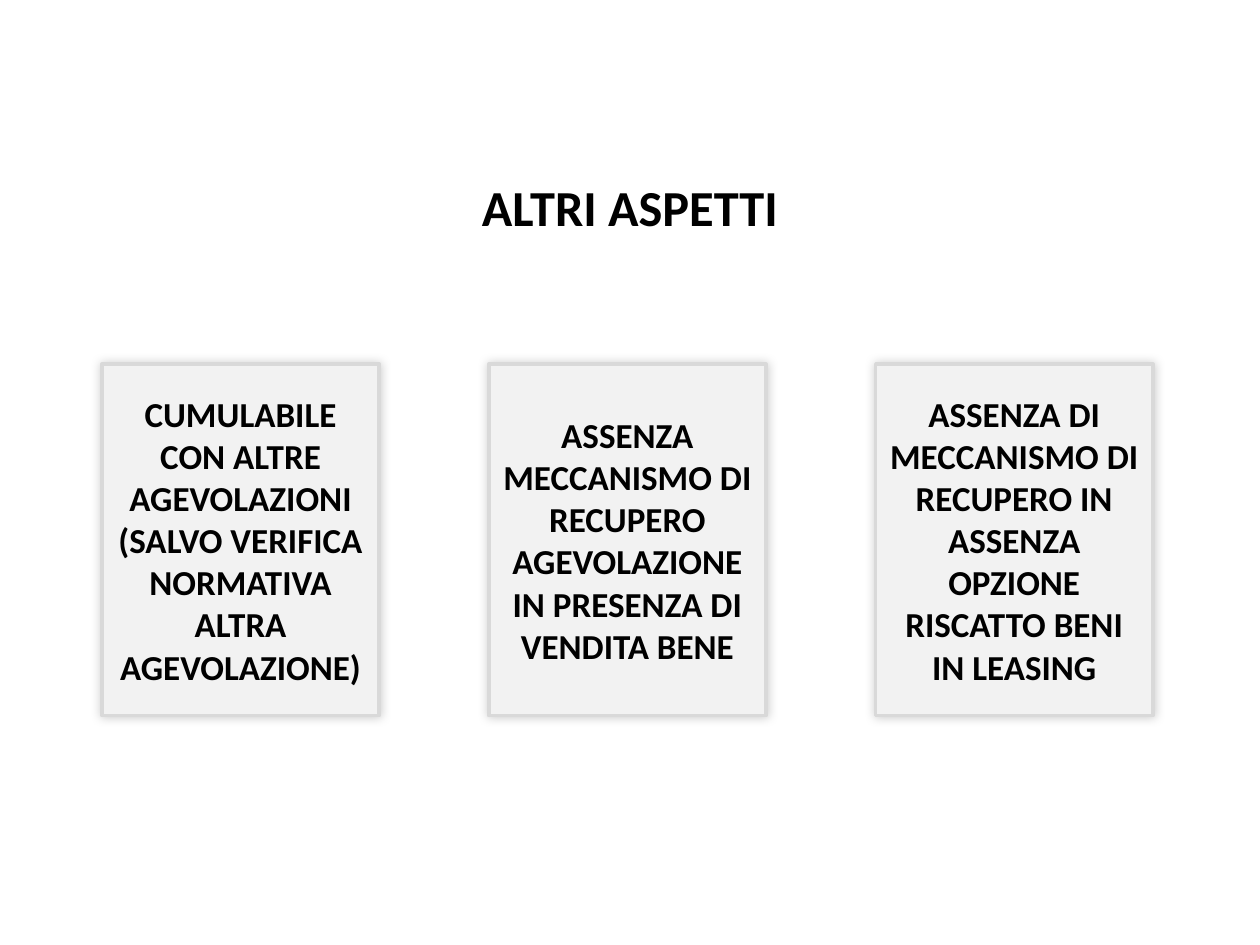
from lxml import etree
from pptx import Presentation
from pptx.dml.color import RGBColor
from pptx.enum.shapes import MSO_SHAPE
from pptx.enum.text import MSO_ANCHOR, MSO_AUTO_SIZE, PP_ALIGN
from pptx.oxml import parse_xml
from pptx.util import Inches, Pt

RECTANGLE = MSO_SHAPE.RECTANGLE
MIDDLE = MSO_ANCHOR.MIDDLE
CENTER = PP_ALIGN.CENTER
NO_AUTOFIT = MSO_AUTO_SIZE.NONE

HEADING = "ALTRI ASPETTI"
ASPECTS = [
    "CUMULABILE CON ALTRE AGEVOLAZIONI (SALVO VERIFICA NORMATIVA ALTRA AGEVOLAZIONE)",
    "ASSENZA MECCANISMO DI RECUPERO AGEVOLAZIONE IN PRESENZA DI VENDITA BENE",
    "ASSENZA DI MECCANISMO DI RECUPERO IN ASSENZA OPZIONE RISCATTO BENI IN LEASING",
]

CARD_LEFT, CARD_TOP = 0.81, 2.89
CARD_WIDTH, CARD_HEIGHT = 2.2, 2.79
CARD_STEP = 3.07

DRAWING_NS = "http://schemas.openxmlformats.org/drawingml/2006/main"
SOFT_SHADOW = f"""
<a:effectLst xmlns:a="{DRAWING_NS}">
  <a:outerShdw blurRad="{Pt(6)}" dist="0" dir="{225 * 60000}" algn="ctr" rotWithShape="0">
    <a:srgbClr val="000000"><a:alpha val="20000"/></a:srgbClr>
  </a:outerShdw>
</a:effectLst>"""


def color(hex_code):
    return RGBColor.from_string(hex_code)


def write(shape, text, size):
    frame = shape.text_frame
    frame.text = text
    frame.word_wrap = True
    frame.auto_size = NO_AUTOFIT
    frame.vertical_anchor = MIDDLE
    paragraph = frame.paragraphs[0]
    paragraph.alignment = CENTER
    font = paragraph.font
    font.name = "Calibri"
    font.size = Pt(size)
    font.bold = True
    font.color.rgb = color("000000")


def add_shadow(shape):
    shape.shadow.inherit = False
    properties = shape._element.spPr
    empty_effects = properties.find(etree.QName(DRAWING_NS, "effectLst").text)
    properties.replace(empty_effects, parse_xml(SOFT_SHADOW))


def add_card(slide, left, text):
    card = slide.shapes.add_shape(
        RECTANGLE, Inches(left), Inches(CARD_TOP), Inches(CARD_WIDTH), Inches(CARD_HEIGHT)
    )
    card.fill.solid()
    card.fill.fore_color.rgb = color("F2F2F2")
    card.line.color.rgb = color("D9D9D9")
    card.line.width = Pt(2)
    add_shadow(card)
    write(card, text, 20)


def main():
    presentation = Presentation()
    presentation.slide_width = Inches(10)
    presentation.slide_height = Inches(7.5)
    slide = presentation.slides.add_slide(presentation.slide_layouts[5])

    heading = slide.shapes.title
    heading.left, heading.top = Inches(0), Inches(1.34)
    heading.width, heading.height = Inches(10), Inches(0.6)
    write(heading, HEADING, 28.8)

    for index, aspect in enumerate(ASPECTS):
        add_card(slide, CARD_LEFT + index * CARD_STEP, aspect)

    presentation.save("out.pptx")


if __name__ == "__main__":
    main()
